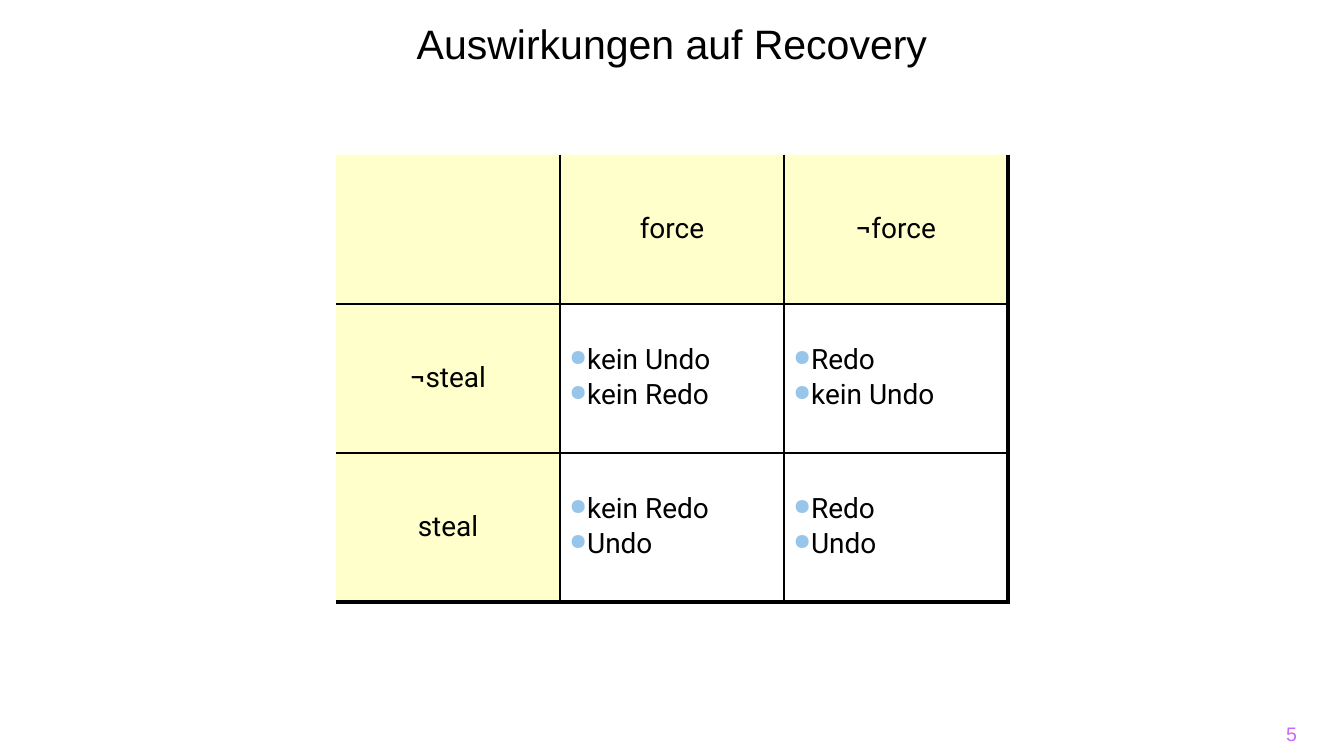
import pptx
import pptx.util
import pptx.dml.color
import pptx.enum.text
import pptx.oxml
import pptx.oxml.ns

# Content
TITLE = "Auswirkungen auf Recovery"
PAGE_NUMBER = "5"
ROWS = [
    ["", "force", "¬force"],
    ["¬steal", ["kein Undo", "kein Redo"], ["Redo", "kein Undo"]],
    ["steal", ["kein Redo", "Undo"], ["Redo", "Undo"]],
]

THEME = {
    "ink": "000000", "number": "CC66FF", "header": "FFFF99", "bullet": "98C6EA",
    "title_font": "Arial", "table_font": "Roboto",
    "title_size": 22, "table_size": 15, "number_size": 10.5,
    "thin": 1, "thick": 2.25,
}
ALIGN = pptx.enum.text.PP_ALIGN
ANCHOR = pptx.enum.text.MSO_ANCHOR
Inches = pptx.util.Inches
Pt = pptx.util.Pt


def add_xml(parent, tag, **attributes):
    child = pptx.oxml.parse_xml(f"<{tag} {pptx.oxml.ns.nsdecls('a')}/>")
    for name, value in attributes.items():
        child.set(name, str(value))
    parent.append(child)
    return child


def style_font(font, name, size, color):
    font.name = name
    font.size = Pt(size)
    font.color.rgb = pptx.dml.color.RGBColor.from_string(color)


def add_text(page, text, place, anchor, insets, align, name, size, color):
    box = page.shapes.add_textbox(*(Inches(value) for value in place))
    frame = box.text_frame
    frame.word_wrap = True
    frame.vertical_anchor = anchor
    frame.margin_left, frame.margin_top, frame.margin_right, frame.margin_bottom = (
        Inches(value) for value in insets)
    frame.text = text
    para = frame.paragraphs[0]
    para.alignment = align
    style_font(para.runs[0].font, name, size, color)
    return para


def add_border(properties, side, width):
    line = add_xml(properties, f"a:ln{side}", w=Pt(width))
    if width:
        fill = add_xml(line, "a:solidFill")
        add_xml(fill, "a:srgbClr", val=THEME["ink"])
    else:
        add_xml(line, "a:noFill")


def add_bullet(para):
    properties = para._p.get_or_add_pPr()
    color = add_xml(properties, "a:buClr")
    add_xml(color, "a:srgbClr", val=THEME["bullet"])
    add_xml(properties, "a:buSzPct", val=80000)
    add_xml(properties, "a:buChar", char="●")


def fill_cell(cell, content, is_header):
    if is_header:
        cell.fill.solid()
        cell.fill.fore_color.rgb = pptx.dml.color.RGBColor.from_string(THEME["header"])
        color = cell._tc.tcPr.xpath("./a:solidFill/a:srgbClr")[0]
        add_xml(color, "a:alpha", val=50000)
    else:
        cell.fill.background()
    cell.vertical_anchor = ANCHOR.MIDDLE
    cell.margin_left = cell.margin_right = Inches(0.07)
    cell.margin_top = cell.margin_bottom = Inches(0.04)
    cell.text_frame.text = content if is_header else "\n".join(content)
    for index, para in enumerate(cell.text_frame.paragraphs):
        para.line_spacing = 0.9
        if index:
            para.space_before = Pt(0.2 * THEME["table_size"])
        if is_header:
            para.alignment = ALIGN.CENTER
        else:
            add_bullet(para)
        for span in para.runs:
            style_font(span.font, THEME["table_font"], THEME["table_size"], THEME["ink"])


def add_matrix(page):
    count = len(ROWS)
    frame = page.shapes.add_table(
        count, count, Inches(2.5), Inches(1.15), Inches(5), Inches(3.33))
    table = frame.table
    table.first_row = table.horz_banding = False
    last = count - 1
    for r, row in enumerate(ROWS):
        for c, content in enumerate(row):
            cell = table.cell(r, c)
            # Open at left and top, thick at right and bottom, thin inside
            widths = {
                "L": THEME["thin"] if c else 0,
                "R": THEME["thick"] if c == last else THEME["thin"],
                "T": THEME["thin"] if r else 0,
                "B": THEME["thick"] if r == last else THEME["thin"],
            }
            properties = cell._tc.get_or_add_tcPr()
            for side, width in widths.items():
                add_border(properties, side, width)
            fill_cell(cell, content, r == 0 or c == 0)


def main():
    deck = pptx.Presentation()
    # Widescreen, 16:9
    deck.slide_width = Inches(10)
    deck.slide_height = deck.slide_width * 9 // 16
    page = deck.slides.add_slide(deck.slide_layouts[6])

    # Page number
    add_text(page, PAGE_NUMBER, (7.41, 5.31, 2.24, 0.3), ANCHOR.MIDDLE,
             (0, 0.05, 0, 0.05), ALIGN.RIGHT,
             THEME["title_font"], THEME["number_size"], THEME["number"])

    # Title
    title = add_text(page, TITLE, (0, 0, 10, 0.94), ANCHOR.TOP,
                     (0.1, 0.05, 0.1, 0.05), ALIGN.CENTER,
                     THEME["title_font"], THEME["title_size"], THEME["ink"])
    title.line_spacing = 1.25

    # Recovery matrix
    add_matrix(page)
    deck.save("out.pptx")


if __name__ == "__main__":
    main()
